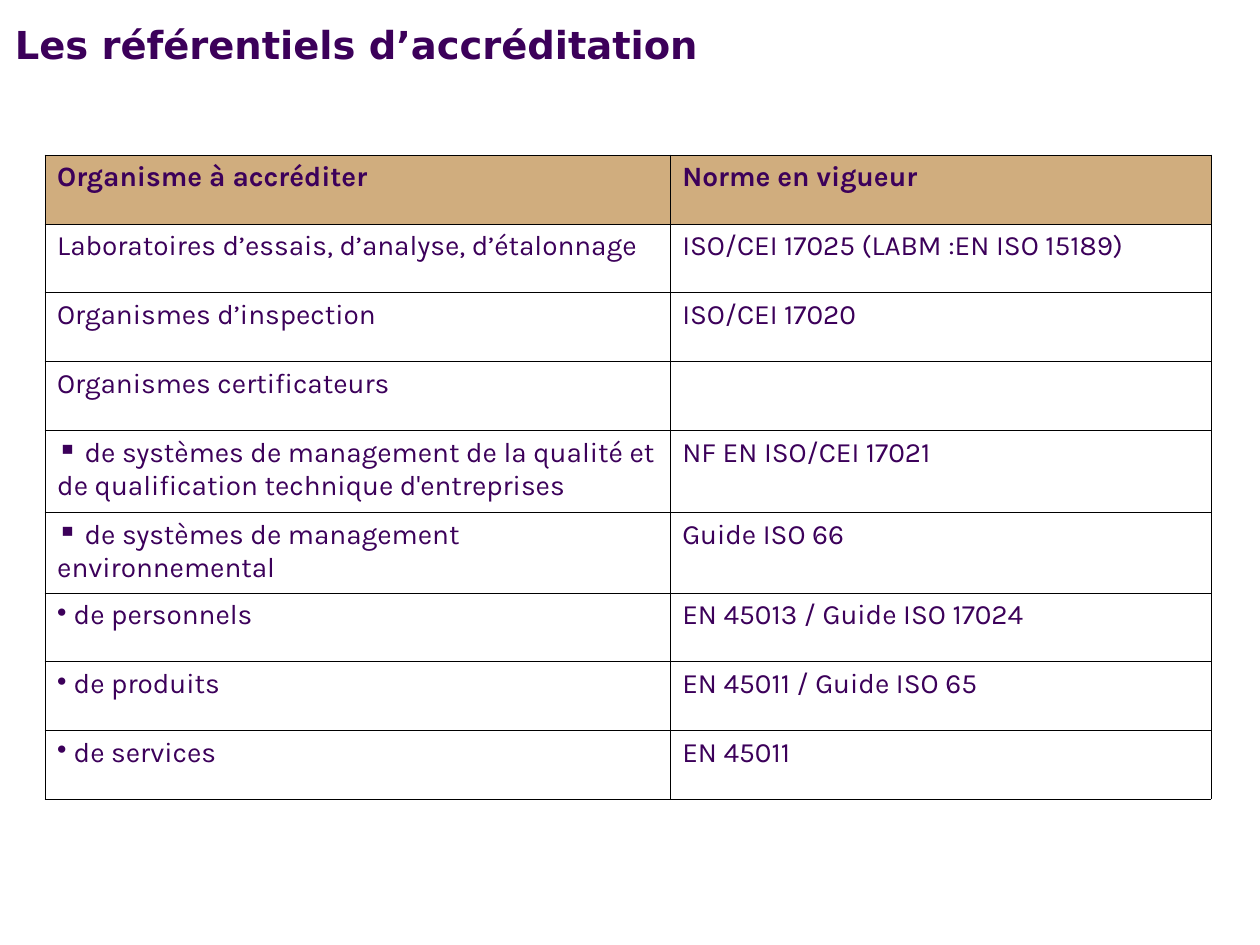
from lxml.etree import SubElement
from pptx import Presentation
from pptx.dml.color import RGBColor
from pptx.enum.text import MSO_ANCHOR, MSO_AUTO_SIZE, PP_ALIGN
from pptx.oxml.ns import qn
from pptx.util import Cm, Pt

PURPLE = RGBColor(0x3C, 0x00, 0x5A)
SAND = RGBColor(0xD0, 0xAD, 0x7E)
BLACK = RGBColor(0x00, 0x00, 0x00)

COLUMN_WIDTHS = [12.6, 10.92]
ROW_HEIGHTS = [1.39] * 4 + [1.65, 1.62] + [1.39] * 3
STANDARDS = [
    ("", "Organisme à accréditer", "Norme en vigueur"),
    ("", "Laboratoires d’essais, d’analyse, d’étalonnage", "ISO/CEI 17025 (LABM :EN ISO 15189)"),
    ("", "Organismes d’inspection", "ISO/CEI 17020"),
    ("", "Organismes certificateurs", ""),
    ("▪", " de systèmes de management de la qualité et de qualification technique d'entreprises",
     "NF EN ISO/CEI 17021"),
    ("▪", " de systèmes de management environnemental", "Guide ISO 66"),
    ("•", " de personnels", "EN 45013 / Guide ISO 17024"),
    ("•", " de produits", "EN 45011 / Guide ISO 65"),
    ("•", " de services", "EN 45011"),
]


class SlideBuilder:
    title_font = "DejaVu Sans"
    body_font = "Karla"
    border_width = Pt(0.11)

    def __init__(self, slide):
        self.slide = slide

    def format_text(self, paragraph, name, size, bold, spacing):
        paragraph.alignment = PP_ALIGN.LEFT
        paragraph.line_spacing = spacing
        for run in paragraph.runs:
            run.font.name = name
            run.font.size = Pt(size)
            run.font.bold = bold
            run.font.color.rgb = PURPLE

    def add_title(self, text, left, top, width, height):
        title = self.slide.shapes.title
        title.left, title.top = Cm(left), Cm(top)
        title.width, title.height = Cm(width), Cm(height)
        frame = title.text_frame
        frame.margin_left = frame.margin_top = frame.margin_right = frame.margin_bottom = 0
        frame.vertical_anchor = MSO_ANCHOR.TOP
        frame.auto_size = MSO_AUTO_SIZE.NONE
        frame.word_wrap = True
        frame.text = text
        self.format_text(frame.paragraphs[0], self.title_font, 22, True, 0.9)

    def add_bullet(self, paragraph, character):
        properties = paragraph._p.get_or_add_pPr()
        properties.set("marL", "0")
        properties.set("indent", "0")
        color = SubElement(properties, qn("a:buClr"))
        SubElement(color, qn("a:srgbClr"), val=str(PURPLE))
        SubElement(properties, qn("a:buChar"), char=character)

    def add_borders(self, cell):
        properties = cell._tc.get_or_add_tcPr()
        for side in ("lnL", "lnR", "lnT", "lnB"):
            line = SubElement(properties, qn(f"a:{side}"), w=str(self.border_width))
            fill = SubElement(line, qn("a:solidFill"))
            SubElement(fill, qn("a:srgbClr"), val=str(BLACK))

    def fill_cell(self, cell, text, bullet, is_header):
        self.add_borders(cell)
        if is_header:
            cell.fill.solid()
            cell.fill.fore_color.rgb = SAND
        else:
            cell.fill.background()
        cell.text = text
        paragraph = cell.text_frame.paragraphs[0]
        if bullet:
            self.add_bullet(paragraph, bullet)
        self.format_text(paragraph, self.body_font, 16, is_header, 1.01)

    def add_table(self, rows, left, top, widths, heights):
        table = self.slide.shapes.add_table(
            len(rows), len(widths), Cm(left), Cm(top), Cm(sum(widths)), Cm(sum(heights))
        ).table
        for column, width in zip(table.columns, widths):
            column.width = Cm(width)
        for row, height in zip(table.rows, heights):
            row.height = Cm(height)
        for index, (bullet, body, standard) in enumerate(rows):
            self.fill_cell(table.cell(index, 0), body, bullet, index == 0)
            self.fill_cell(table.cell(index, 1), standard, "", index == 0)


def main():
    presentation = Presentation()
    presentation.slide_width, presentation.slide_height = Cm(25.4), Cm(19.05)
    builder = SlideBuilder(presentation.slides.add_slide(presentation.slide_layouts[5]))
    builder.add_title("Les référentiels d’accréditation", 0.3, 0.53, 22.86, 1.7)
    builder.add_table(STANDARDS, 0.9, 3.12, COLUMN_WIDTHS, ROW_HEIGHTS)
    presentation.save("out.pptx")


if __name__ == "__main__":
    main()
